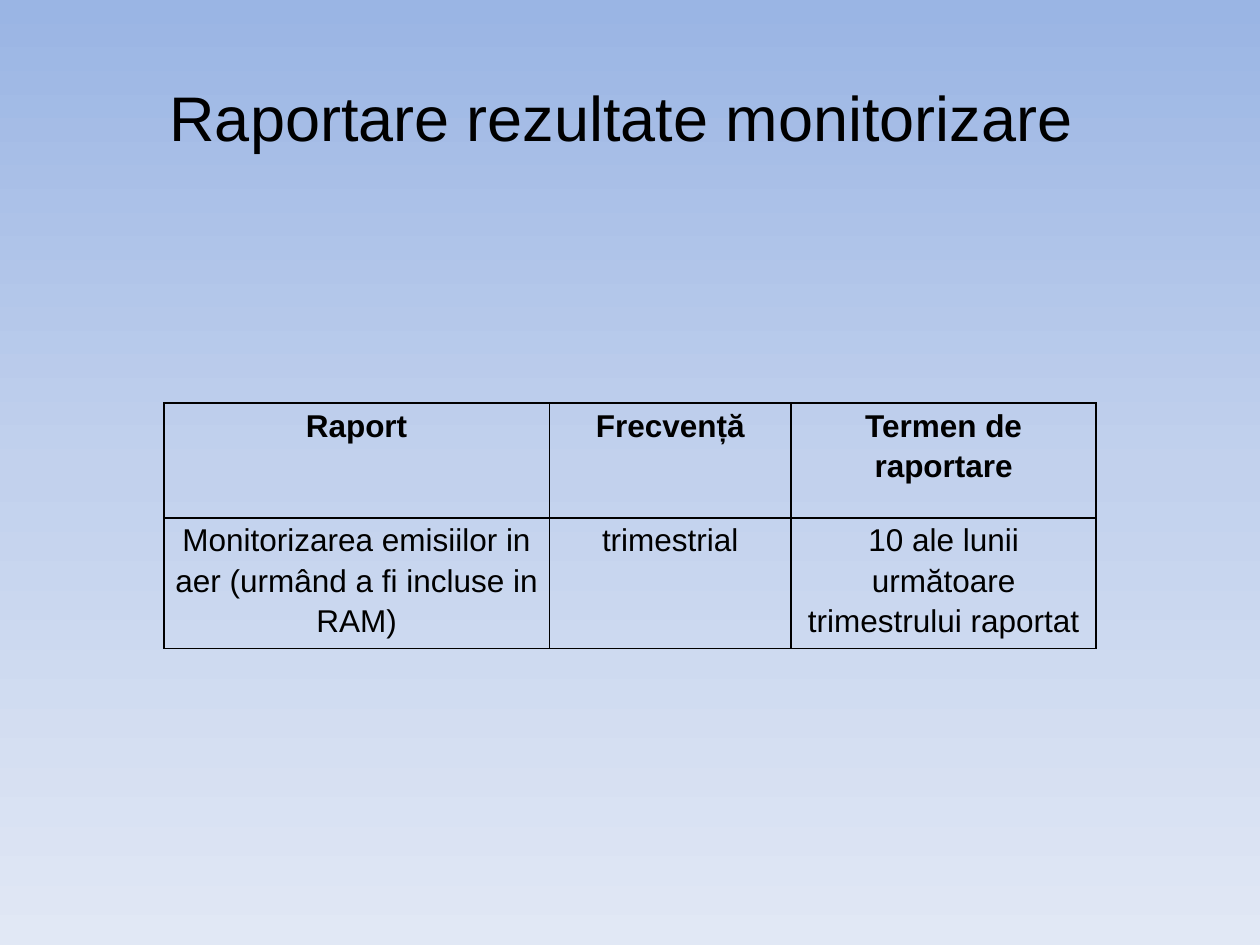
from copy import deepcopy

from lxml import etree
from pptx import Presentation
from pptx.dml.color import RGBColor
from pptx.enum.text import MSO_ANCHOR, PP_ALIGN
from pptx.oxml.ns import qn
from pptx.util import Inches, Pt

CENTER = PP_ALIGN.CENTER
MIDDLE = MSO_ANCHOR.MIDDLE
TOP = MSO_ANCHOR.TOP

FONT = "Arial"
BLACK = "000000"
BACKGROUND_STOPS = [(0, "9AB5E4"), (0.5, "C2D1ED"), (1, "E1E8F5")]

COLUMN_WIDTHS = [3.06, 1.92, 2.42]
ROW_HEIGHTS = [0.91, 0.97]
REPORT_ROWS = [
    ["Raport", "Frecvență", "Termen de raportare"],
    [
        "Monitorizarea emisiilor in aer (urmând a fi incluse in RAM)",
        "trimestrial",
        "10 ale lunii următoare\ntrimestrului raportat",
    ],
]


def color(value):
    return RGBColor.from_string(value)


def write_text(frame, text, size=18, bold=False, spacing=1.0, anchor=TOP):
    """Fill a text frame with one centred paragraph per line."""
    frame.word_wrap = True
    frame.vertical_anchor = anchor
    for index, line in enumerate(text.split("\n")):
        para = frame.paragraphs[0] if index == 0 else frame.add_paragraph()
        para.alignment = CENTER
        para.line_spacing = spacing
        span = para.add_run()
        span.text = line
        span.font.name = FONT
        span.font.size = Pt(size)
        span.font.bold = bold
        span.font.color.rgb = color(BLACK)


def paint_background(page):
    fill = page.background.fill
    fill.gradient()
    fill.gradient_angle = 270  # counter-clockwise: runs top to bottom
    # The default gradient has two stops; add one for the middle
    stop_list = page.background._cSld.find(".//" + qn("a:gsLst"))
    stop_list.append(deepcopy(stop_list[-1]))
    for stop, (position, value) in zip(fill.gradient_stops, BACKGROUND_STOPS):
        stop.position = position
        stop.color.rgb = color(value)


def add_title(page, text):
    box = page.shapes.add_textbox(Inches(0.5), Inches(0.3), Inches(9), Inches(1.25))
    write_text(box.text_frame, text, size=36, anchor=MIDDLE)


def add_borders(cell, width=1):
    properties = cell._tc.get_or_add_tcPr()
    for position, side in enumerate(("a:lnL", "a:lnR", "a:lnT", "a:lnB")):
        line = etree.Element(qn(side), w=str(Pt(width)))
        solid = etree.SubElement(line, qn("a:solidFill"))
        etree.SubElement(solid, qn("a:srgbClr"), val=BLACK)
        properties.insert(position, line)


def add_report_table(page):
    frame = page.shapes.add_table(
        len(ROW_HEIGHTS), len(COLUMN_WIDTHS), Inches(1.3), Inches(3.2),
        Inches(sum(COLUMN_WIDTHS)), Inches(sum(ROW_HEIGHTS)),
    )
    table = frame.table
    table.first_row = False
    table.horz_banding = False
    for column, width in zip(table.columns, COLUMN_WIDTHS):
        column.width = Inches(width)
    for row, height in zip(table.rows, ROW_HEIGHTS):
        row.height = Inches(height)

    # Transparent cells, with a bold header row
    for row_index, texts in enumerate(REPORT_ROWS):
        for column_index, text in enumerate(texts):
            cell = table.cell(row_index, column_index)
            cell.margin_left = cell.margin_right = Inches(0.07)
            cell.margin_top = cell.margin_bottom = 0
            cell.fill.background()
            add_borders(cell)
            write_text(cell.text_frame, text, bold=row_index == 0, spacing=1.15)


def main():
    deck = Presentation()
    deck.slide_width = Inches(10)
    deck.slide_height = Inches(7.5)
    page = deck.slides.add_slide(deck.slide_layouts[6])
    paint_background(page)
    add_title(page, "Raportare rezultate monitorizare ")
    add_report_table(page)
    deck.save("out.pptx")


if __name__ == "__main__":
    main()
